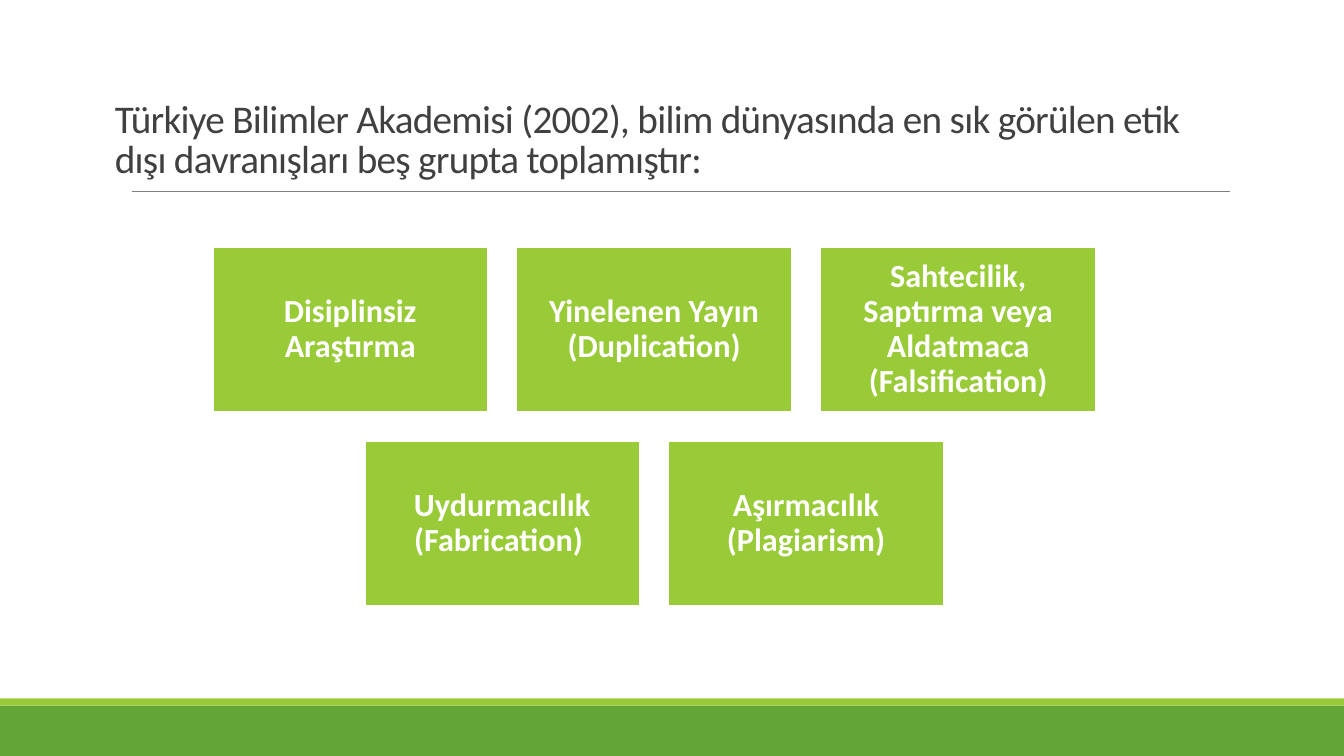
from lxml.etree import SubElement
from pptx import Presentation
from pptx.dml.color import RGBColor
from pptx.enum.shapes import MSO_CONNECTOR, MSO_SHAPE
from pptx.enum.text import MSO_ANCHOR, MSO_AUTO_SIZE, PP_ALIGN
from pptx.oxml.ns import qn
from pptx.util import Cm, Pt

COLORS = {
    "green": "63A537",
    "lime": "99CB38",
    "rule": "808080",
    "title": "404040",
    "white": "FFFFFF",
}
WIDTH, HEIGHT = 33.87, 19.05
TITLE = (
    "Türkiye Bilimler Akademisi (2002), bilim dünyasında en sık görülen "
    "etik dışı davranışları beş grupta toplamıştır:"
)
ROWS = [
    [
        "Disiplinsiz Araştırma",
        "Yinelenen Yayın (Duplication)",
        "Sahtecilik, Saptırma veya Aldatmaca (Falsification)",
    ],
    ["Uydurmacılık (Fabrication) ", "Aşırmacılık (Plagiarism)"],
]
TITLE_FONT = {"name": "Calibri", "size": Pt(28), "bold": False}
CARD_FONT = {"name": "Calibri", "size": Pt(23), "bold": True}
TITLE_FRAME = {
    "word_wrap": True,
    "auto_size": MSO_AUTO_SIZE.NONE,
    "vertical_anchor": MSO_ANCHOR.BOTTOM,
}
CARD_FRAME = {
    "word_wrap": True,
    "vertical_anchor": MSO_ANCHOR.MIDDLE,
    "margin_left": Cm(0.25),
    "margin_right": Cm(0.25),
    "margin_top": Cm(0.25),
    "margin_bottom": Cm(0.25),
}
TITLE_PARAGRAPH = {"alignment": PP_ALIGN.LEFT, "line_spacing": 0.85}
CARD_PARAGRAPH = {"alignment": PP_ALIGN.CENTER, "line_spacing": 0.9}


def rgb(name):
    return RGBColor.from_string(COLORS[name])


def apply(obj, values):
    for name, value in values.items():
        setattr(obj, name, value)


def write(sp, text, frame, paragraph, font, color):
    tf = sp.text_frame
    apply(tf, frame)
    p = tf.paragraphs[0]
    apply(p, paragraph)
    r = p.add_run()
    r.text = text
    apply(r.font, font)
    r.font.color.rgb = rgb(color)
    return r


def add_rect(s, left, top, width, height, fill):
    sp = s.shapes.add_shape(
        MSO_SHAPE.RECTANGLE, Cm(left), Cm(top), Cm(width), Cm(height)
    )
    sp.shadow.inherit = False
    sp.fill.solid()
    sp.fill.fore_color.rgb = rgb(fill)
    sp.line.fill.background()
    return sp


def add_footer(s, left, top, width, height):
    band = 0.18
    add_rect(s, left, top + band, width, height - band, "green")
    add_rect(s, left, top, width, band, "lime")


def add_title(s, left, top, width, height):
    sp = s.shapes.title
    box = {"left": left, "top": top, "width": width, "height": height}
    apply(sp, {name: Cm(value) for name, value in box.items()})
    r = write(sp, TITLE, TITLE_FRAME, TITLE_PARAGRAPH, TITLE_FONT, "title")
    r._r.get_or_add_rPr().set("spc", "-50")
    y = Cm(top + height + 0.13)
    rule = s.shapes.add_connector(
        MSO_CONNECTOR.STRAIGHT, Cm(left + 0.69), y, Cm(left + width + 0.6), y
    )
    rule.line.color.rgb = rgb("rule")
    rule.line.width = Pt(0.5)
    SubElement(rule._element.spPr, qn("a:effectLst"))


def add_cards(s, left, top, width, height):
    gap = 0.72
    columns = max(len(row) for row in ROWS)
    card_w = (width - gap * (columns - 1)) / columns
    card_h = (height - gap * (len(ROWS) - 1)) / len(ROWS)
    for i, row in enumerate(ROWS):
        indent = (columns - len(row)) * (card_w + gap) / 2
        for j, text in enumerate(row):
            x = left + indent + j * (card_w + gap)
            y = top + i * (card_h + gap)
            sp = add_rect(s, x, y, card_w, card_h, "lime")
            sp.line.color.rgb = rgb("white")
            sp.line.width = Pt(1.25)
            write(sp, text, CARD_FRAME, CARD_PARAGRAPH, CARD_FONT, "white")


def main():
    prs = Presentation()
    prs.slide_width, prs.slide_height = Cm(WIDTH), Cm(HEIGHT)
    s = prs.slides.add_slide(prs.slide_layouts[5])
    add_footer(s, 0, 17.6, WIDTH, HEIGHT - 17.6)
    add_title(s, 2.64, 1.52, 27.76, 3.18)
    add_cards(s, 5.36, 6.22, 22.26, 9.05)
    prs.save("out.pptx")


if __name__ == "__main__":
    main()
